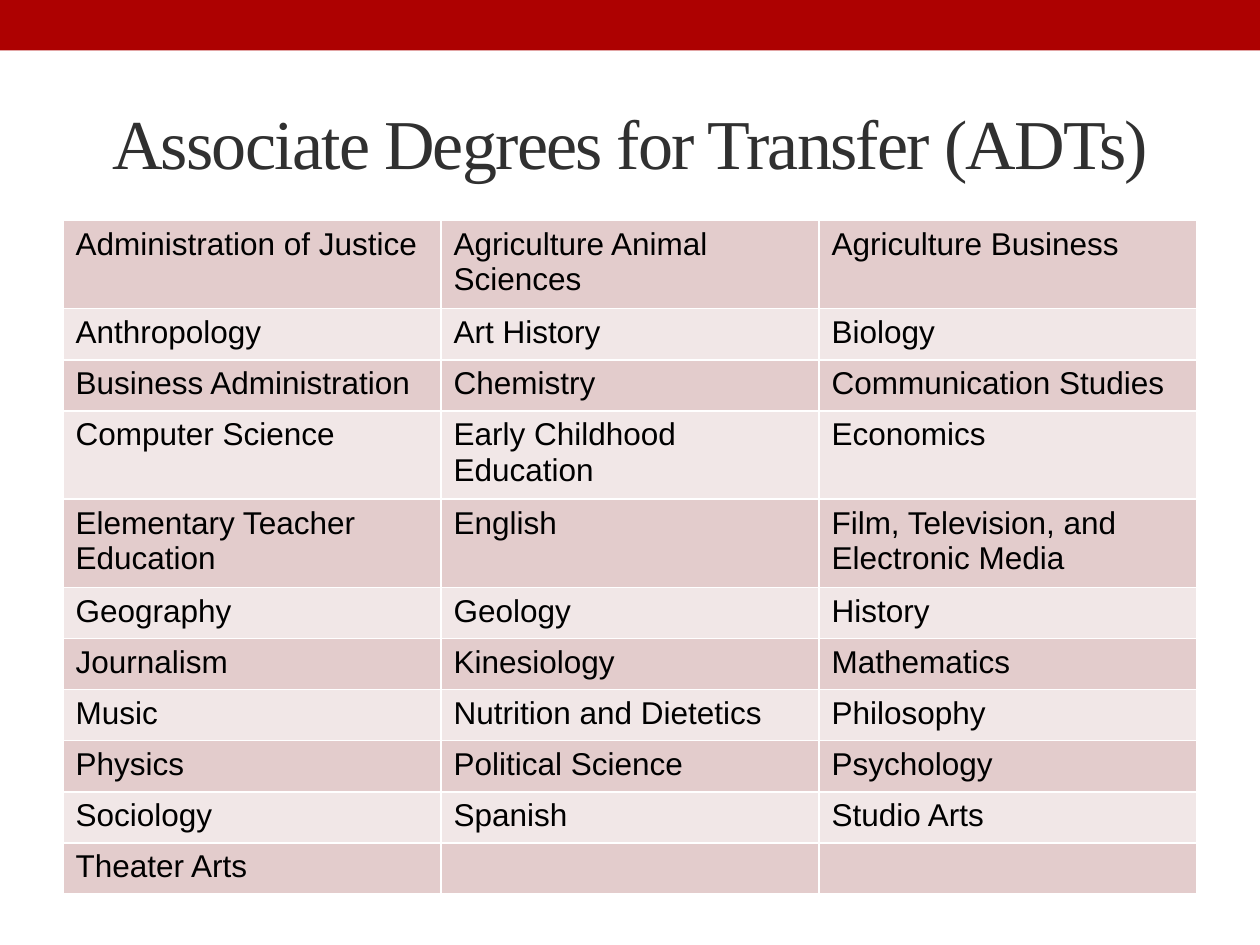
from lxml import etree
from pptx import Presentation
from pptx.dml.color import RGBColor
from pptx.enum import shapes, text
from pptx.oxml import ns
from pptx.util import Pt

COLORS = {
    "banner": "AD0101",
    "title": "303030",
    "text": "000000",
    "odd_row": "E3CCCC",
    "even_row": "F1E7E7",
    "border": "FFFFFF",
}
DEGREES = [
    ("Administration of Justice", "Agriculture Animal Sciences", "Agriculture Business"),
    ("Anthropology", "Art History", "Biology"),
    ("Business Administration", "Chemistry", "Communication Studies"),
    ("Computer Science", "Early Childhood Education", "Economics"),
    ("Elementary Teacher Education", "English", "Film, Television, and Electronic Media"),
    ("Geography", "Geology", "History"),
    ("Journalism", "Kinesiology", "Mathematics"),
    ("Music", "Nutrition and Dietetics", "Philosophy"),
    ("Physics", "Political Science", "Psychology"),
    ("Sociology", "Spanish", "Studio Arts"),
    ("Theater Arts", "", ""),
]
ROW_HEIGHT = 29.2


def add_run(paragraph, words, font, size, color):
    run = paragraph.add_run()
    run.text = words
    run.font.name = font
    run.font.size = Pt(size)
    run.font.color.rgb = RGBColor.from_string(COLORS[color])
    return run


def add_borders(cell):
    """Draw a thin line on all four sides; call before setting the fill."""
    for side in ("lnL", "lnR", "lnT", "lnB"):
        line = etree.SubElement(cell._tc.get_or_add_tcPr(), ns.qn(f"a:{side}"), w=str(Pt(1)))
        solid = etree.SubElement(line, ns.qn("a:solidFill"))
        etree.SubElement(solid, ns.qn("a:srgbClr"), val=COLORS["border"])


prs = Presentation()
prs.slide_width, prs.slide_height = Pt(720), Pt(540)
slide = prs.slides.add_slide(prs.slide_layouts[6])

banner = slide.shapes.add_shape(shapes.MSO_SHAPE.RECTANGLE, 0, 0, Pt(720), Pt(28.8))
banner.shadow.inherit = False
banner.fill.solid()
banner.fill.fore_color.rgb = RGBColor.from_string(COLORS["banner"])
banner.line.fill.background()

title = slide.shapes.add_textbox(Pt(36), Pt(41.76), Pt(648), Pt(77.76)).text_frame
title.word_wrap = True
title.vertical_anchor = text.MSO_ANCHOR.MIDDLE
heading = title.paragraphs[0]
heading.alignment = text.PP_ALIGN.CENTER
heading_run = add_run(heading, "Associate Degrees for Transfer (ADTs)", "Times New Roman", 40, "title")
heading_run.font._element.set("spc", "-100")

degree_table = slide.shapes.add_table(
    len(DEGREES), 3, Pt(36), Pt(126), Pt(648), Pt(ROW_HEIGHT * len(DEGREES))
).table
for row in degree_table.rows:
    row.height = Pt(ROW_HEIGHT)
for column in degree_table.columns:
    column.width = Pt(216)

for r, names in enumerate(DEGREES):
    band = "even_row" if r % 2 else "odd_row"
    for c, name in enumerate(names):
        cell = degree_table.cell(r, c)
        add_borders(cell)
        cell.fill.solid()
        cell.fill.fore_color.rgb = RGBColor.from_string(COLORS[band])
        if name:
            add_run(cell.text_frame.paragraphs[0], name, "Arial", 18, "text")

prs.save("out.pptx")
